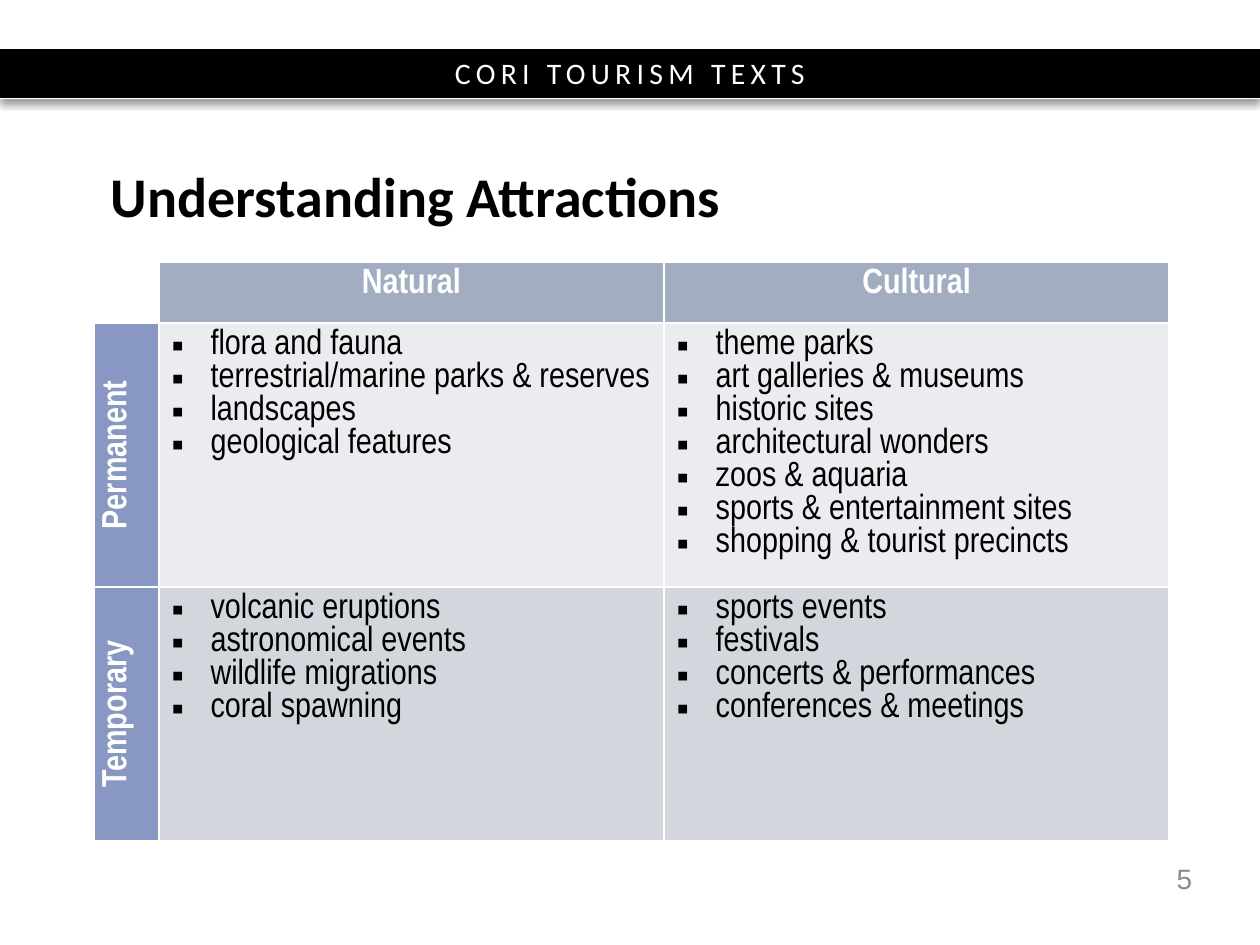
from lxml import etree
from pptx import Presentation
from pptx.dml.color import RGBColor
from pptx.enum.shapes import MSO_CONNECTOR, MSO_SHAPE
from pptx.enum.text import MSO_ANCHOR, PP_ALIGN
from pptx.oxml.ns import qn
from pptx.util import Emu, Inches, Pt

RECTANGLE, STRAIGHT = MSO_SHAPE.RECTANGLE, MSO_CONNECTOR.STRAIGHT
MIDDLE = MSO_ANCHOR.MIDDLE
LEFT, CENTER, RIGHT = PP_ALIGN.LEFT, PP_ALIGN.CENTER, PP_ALIGN.RIGHT

BLACK = RGBColor(0x00, 0x00, 0x00)
WHITE = RGBColor(0xFF, 0xFF, 0xFF)
GREY = RGBColor(0x8C, 0x8C, 0x8C)
HEADER_BLUE = RGBColor(0xA2, 0xAD, 0xC1)
SIDE_BLUE = RGBColor(0x88, 0x98, 0xC3)
PALE_BAND = RGBColor(0xEA, 0xEC, 0xEF)
DARK_BAND = RGBColor(0xD3, 0xD6, 0xDD)

SLIDE_W, SLIDE_H = Inches(10), Inches(7.5)
COLUMN_SHARES = (0.06, 0.47, 0.47)
ROW_SHARES = (0.105, 0.457, 0.438)
BULLET_INDENT = Inches(0.31)

HEADER_TEXT = {"name": "Arial Narrow", "size": Pt(20), "bold": True}
ITEM_TEXT = {"name": "Arial Narrow", "size": Pt(20), "bold": False}
TITLE_TEXT = {"name": "Calibri", "size": Pt(32), "bold": True}
BANNER_TEXT = {"name": "Calibri", "size": Pt(17)}
NUMBER_TEXT = {"name": "Arial", "size": Pt(16)}

KINDS = ["Natural", "Cultural"]
ATTRACTIONS = [
    ("Permanent", PALE_BAND, [
        ["flora and fauna", "terrestrial/marine parks & reserves",
         "landscapes", "geological features"],
        ["theme parks", "art galleries & museums", "historic sites",
         "architectural wonders", "zoos & aquaria",
         "sports & entertainment sites", "shopping & tourist precincts"],
    ]),
    ("Temporary", DARK_BAND, [
        ["volcanic eruptions", "astronomical events",
         "wildlife migrations", "coral spawning"],
        ["sports events", "festivals", "concerts & performances",
         "conferences & meetings"],
    ]),
]


def add_xml(parent, tag, **attributes):
    return etree.SubElement(parent, qn(tag), attributes)


def write(paragraph, text, style, color, align=LEFT):
    paragraph.alignment = align
    run = paragraph.add_run()
    run.text = text
    for key, value in style.items():
        setattr(run.font, key, value)
    run.font.color.rgb = color
    return run


def add_banner(slide, left, top, width, height):
    """Black band with a soft shadow, edged by white rules."""
    band = slide.shapes.add_shape(RECTANGLE, left, top, width, height)
    band.shadow.inherit = False
    band.fill.solid()
    band.fill.fore_color.rgb = BLACK
    band.line.fill.background()
    effects = band._element.spPr.find(qn("a:effectLst"))
    shadow = add_xml(effects, "a:outerShdw", blurRad=str(Pt(4)),
                     dist=str(Pt(3)), dir="5400000", rotWithShape="0")
    shade = add_xml(shadow, "a:srgbClr", val=str(BLACK))
    add_xml(shade, "a:alpha", val="40000")

    band.text_frame.vertical_anchor = MIDDLE
    series = write(band.text_frame.paragraphs[0], "CORI TOURISM TEXTS",
                   BANNER_TEXT, WHITE, CENTER)
    series.font._element.set("spc", "300")

    for y in (top, top + height):
        rule = slide.shapes.add_connector(STRAIGHT, left, y, left + width, y)
        rule.line.color.rgb = WHITE
        rule.line.width = Pt(0.75)
        add_xml(rule._element.spPr, "a:effectLst")


def place_title(slide, left, top, width, height):
    title = slide.shapes.title
    title.left, title.top, title.width, title.height = left, top, width, height
    title.text_frame.vertical_anchor = MIDDLE
    heading = title.text_frame.paragraphs[0]
    heading.line_spacing = Pt(32)
    write(heading, "Understanding Attractions", TITLE_TEXT, BLACK)


def format_cell(cell, fill):
    """White borders on all sides, then the fill."""
    properties = cell._tc.get_or_add_tcPr()
    for side in ("a:lnL", "a:lnR", "a:lnT", "a:lnB"):
        border = add_xml(properties, side, w=str(Pt(1)))
        add_xml(add_xml(border, "a:solidFill"), "a:srgbClr", val=str(WHITE))
    cell.fill.solid()
    cell.fill.fore_color.rgb = fill


def fill_heading(cell, text, fill):
    format_cell(cell, fill)
    write(cell.text_frame.paragraphs[0], text, HEADER_TEXT, WHITE, CENTER)


def fill_list(cell, items, fill):
    format_cell(cell, fill)
    frame = cell.text_frame
    for index, item in enumerate(items):
        paragraph = frame.add_paragraph() if index else frame.paragraphs[0]
        properties = paragraph._p.get_or_add_pPr()
        properties.set("marL", str(BULLET_INDENT))
        properties.set("indent", str(-BULLET_INDENT))
        add_xml(properties, "a:buFont", typeface="Arial")
        add_xml(properties, "a:buChar", char="▪")
        write(paragraph, item, ITEM_TEXT, BLACK)


def add_attractions(slide, left, top, width, height):
    table = slide.shapes.add_table(len(ROW_SHARES), len(COLUMN_SHARES),
                                   left, top, width, height).table
    table.first_row = table.horz_banding = False
    for column, share in zip(table.columns, COLUMN_SHARES):
        column.width = Emu(int(width * share))
    for row, share in zip(table.rows, ROW_SHARES):
        row.height = Emu(int(height * share))

    format_cell(table.cell(0, 0), WHITE)
    for column, kind in enumerate(KINDS, 1):
        fill_heading(table.cell(0, column), kind, HEADER_BLUE)
    for row, (duration, band, lists) in enumerate(ATTRACTIONS, 1):
        side = table.cell(row, 0)
        fill_heading(side, duration, SIDE_BLUE)
        side._tc.tcPr.set("vert", "vert270")
        for column, items in enumerate(lists, 1):
            fill_list(table.cell(row, column), items, band)


def add_slide_number(slide, left, top, width, height):
    frame = slide.shapes.add_textbox(left, top, width, height).text_frame
    frame.word_wrap = True
    frame.vertical_anchor = MIDDLE
    write(frame.paragraphs[0], "5", NUMBER_TEXT, GREY, RIGHT)


def main():
    deck = Presentation()
    deck.slide_width, deck.slide_height = SLIDE_W, SLIDE_H
    slide = deck.slides.add_slide(deck.slide_layouts[5])
    add_banner(slide, 0, Inches(0.38), SLIDE_W, Inches(0.4))
    place_title(slide, Inches(0.78), Inches(1.35), Inches(8.53), Inches(0.48))
    add_attractions(slide, Inches(0.75), Inches(2.08), Inches(8.53), Inches(4.59))
    add_slide_number(slide, Inches(7.23), Inches(6.77), Inches(2.33), Inches(0.4))
    deck.save("out.pptx")


if __name__ == "__main__":
    main()
